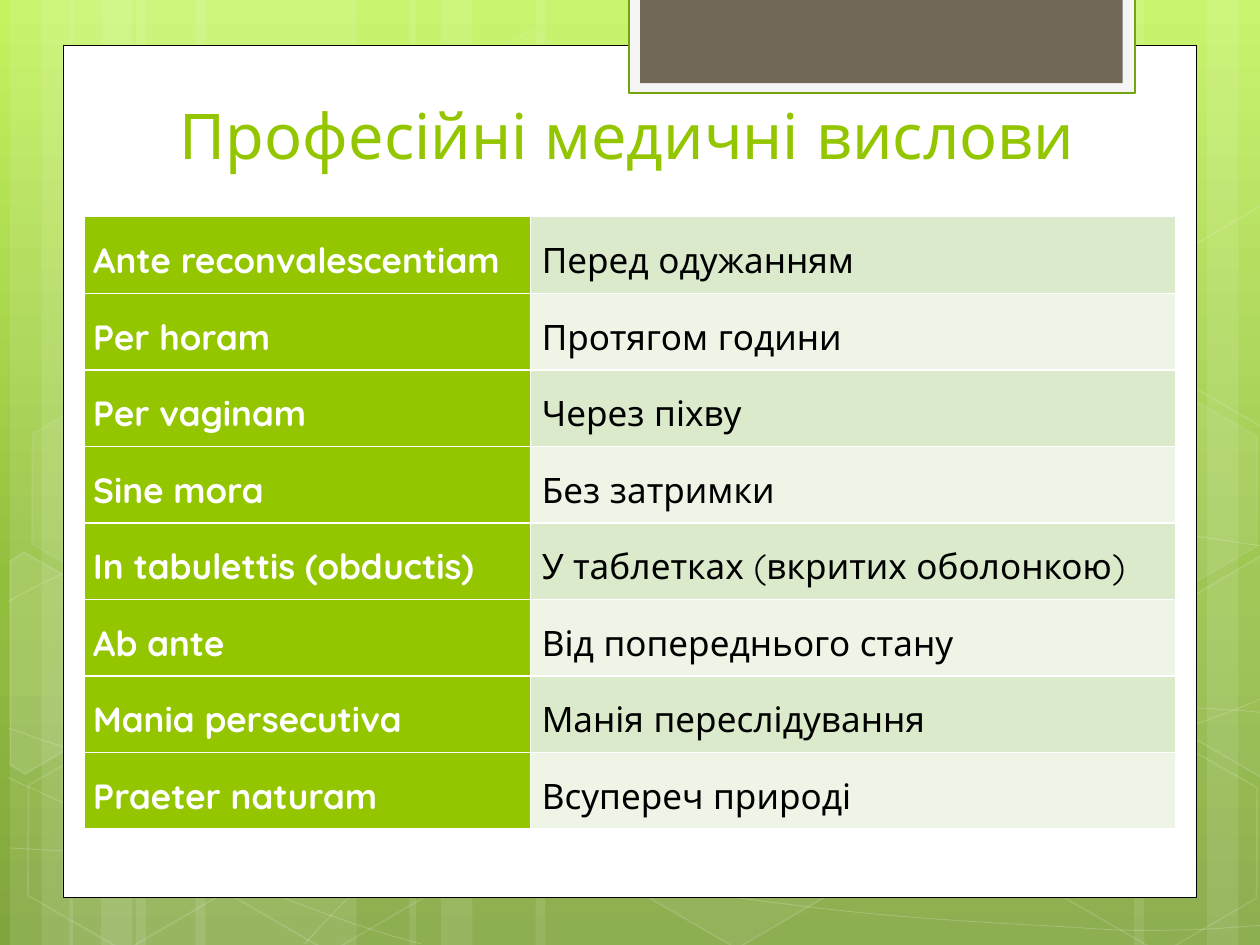
from math import cos, radians, sin
from lxml import etree
from pptx import Presentation
from pptx.dml.color import RGBColor
from pptx.enum.shapes import MSO_SHAPE
from pptx.enum.text import MSO_ANCHOR, MSO_AUTO_SIZE, PP_ALIGN
from pptx.oxml.ns import qn
from pptx.util import Inches, Pt

RECTANGLE, HEXAGON = MSO_SHAPE.RECTANGLE, MSO_SHAPE.HEXAGON
CENTER, JUSTIFY = PP_ALIGN.CENTER, PP_ALIGN.JUSTIFY
BOTTOM, NO_AUTOFIT = MSO_ANCHOR.BOTTOM, MSO_AUTO_SIZE.NONE

COLUMNS, ROWS, CELL = 10, 7.5, Inches(1)
FONT, TILT = "Quicksand", 30
COLORS = {
    "white": "FFFFFF", "black": "000000", "green": "94C600", "tab": "F5F5F5",
    "tab_edge": "74A510", "taupe": "71685A", "band_dark": "DCEACC", "band_light": "EEF5E7",
    "sky": "C3F35F", "meadow": "93BF3F", "moss": "81A53E",
}
BACKDROP_STOPS = [(0, "sky"), (62, "meadow"), (100, "moss")]
STRIPE_CLUSTERS = [(0.08, 1.75), (0.55, 1.75), (3.25, 3.08)]
RIGHT_STRIPES = [(7.33, 1.75), (9.58, 0.5), (9, 0.83)]
WAVES = [
    [[(0.07, 6.73)], [(0.61, 6.76), (1.15, 6.79), (1.9, 6.78)],
     [(2.65, 6.77), (3.58, 6.75), (4.58, 6.65)], [(5.58, 6.55), (7, 6.36), (7.92, 6.17)],
     [(8.83, 5.98), (9.77, 5.68), (10.07, 5.51)]],
    [[(0.07, 4.77)], [(0.36, 4.61), (0.65, 4.46), (1.21, 4.31)],
     [(1.78, 4.16), (2.59, 3.94), (3.47, 3.87)], [(4.36, 3.8), (5.44, 3.79), (6.54, 3.87)],
     [(7.64, 3.95), (9.47, 4.26), (10.07, 4.34)]],
    [[(0.06, 6.17)], [(1.27, 6.72), (2.47, 7.27), (3.34, 7.49)]],
    [[(0.07, 5.78)], [(0.38, 5.89), (0.7, 6), (1.28, 6.16)],
     [(1.86, 6.31), (2.73, 6.56), (3.57, 6.73)], [(4.4, 6.9), (5.45, 7.08), (6.28, 7.18)],
     [(7.11, 7.29), (8, 7.33), (8.53, 7.36)], [(9.05, 7.4), (9.19, 7.38), (9.45, 7.38)],
     [(9.71, 7.37), (9.89, 7.35), (10.07, 7.34)]],
    [[(2.42, 7.49)], [(2.6, 7.29), (2.78, 7.09), (3.02, 6.91)],
     [(3.26, 6.73), (3.6, 6.53), (3.88, 6.39)], [(4.16, 6.25), (4.33, 6.19), (4.7, 6.09)],
     [(5.06, 5.99), (5.73, 5.85), (6.08, 5.78)], [(6.44, 5.71), (6.49, 5.71), (6.8, 5.69)],
     [(7.11, 5.66), (7.6, 5.63), (7.94, 5.62)], [(8.29, 5.61), (8.86, 5.62), (8.86, 5.62)],
     [(9.53, 5.62)], [(9.71, 5.63), (9.88, 5.64), (9.97, 5.65)],
     [(10.06, 5.66), (10.03, 5.65), (10.06, 5.66)]],
]
HEXAGONS = [
    (3.34, 0.36, 4, 8), (4.97, 5.89, 6, 12), (0.11, 5.91, 0, 12), (0.14, 3.12, 7, 8),
    (1.74, 5.92, 0, 12), (7.53, 4.53, 10, 12), (8.34, 5.93, 0, 12), (8.34, 3.14, 7, 8),
]
LEFT_CUT = [(0.08, 4.45), (0.19, 4.38), (0.96, 4.82), (0.95, 5.7), (0.2, 6.14), (0.08, 6.07)]
RIGHT_CUT = [(9.26, 4.85), (10.01, 4.41), (10.09, 4.46), (10.09, 6.13), (10.02, 6.17),
             (9.26, 5.73)]
UPPER_CUT = [(x, y - 2.78) for x, y in RIGHT_CUT]
CUTS = [(LEFT_CUT, (0.36, 5.35), 10), (RIGHT_CUT, (9.85, 5.2), 4), (UPPER_CUT, (9.85, 2.41), 0)]
TITLE = "Професійні медичні вислови"
PHRASES = [
    ("Ante reconvalescentiam", "Перед одужанням"),
    ("Per horam", "Протягом години"),
    ("Per vaginam", "Через піхву"),
    ("Sine mora", "Без затримки"),
    ("In tabulettis (obductis)", "У таблетках (вкритих оболонкою)"),
    ("Ab ante", "Від попереднього стану"),
    ("Mania persecutiva", "Манія переслідування"),
    ("Praeter naturam", "Всупереч природі"),
]


def rgb(name):
    """Return the named colour."""
    return RGBColor.from_string(COLORS[name])


def grid(*lengths):
    """Convert grid lengths to slide units."""
    return [round(length * CELL) for length in lengths]


def paint(shape, fill=None, edge=None, weight=1, fill_opacity=100, edge_opacity=100):
    """Set the fill, edge and opacities of a shape without a shadow."""
    shape.shadow.inherit = False
    shape.fill.background()
    shape.line.fill.background()
    layers = []
    if fill and fill_opacity:
        layers.append((shape.fill, fill, fill_opacity, "a:solidFill"))
    if edge:
        shape.line.width = Pt(weight)
        layers.append((shape.line.fill, edge, edge_opacity, "a:ln/a:solidFill"))
    for layer, color, opacity, route in layers:
        layer.solid()
        layer.fore_color.rgb = rgb(color)
        if opacity < 100:
            steps = [qn(tag) for tag in (route + "/a:srgbClr").split("/")]
            tint = shape.element.spPr.find("/".join(steps))
            etree.SubElement(tint, qn("a:alpha"), val=str(opacity * 1000))


def add_part(slide, box, kind, left, top, width, height):
    """Add a preset shape placed relative to the box."""
    return slide.shapes.add_shape(kind, *grid(box[0] + left, box[1] + top, width, height))


def add_outline(slide, box, points, close):
    """Add a freeform through points relative to the box."""
    corners = [grid(box[0] + x, box[1] + y) for x, y in points]
    builder = slide.shapes.build_freeform(*corners[0])
    builder.add_line_segments(corners[1:], close=close)
    return builder.convert_to_shape()


def add_wave(slide, box, segments):
    """Add an open outline whose three-point segments are cubic curves."""
    wave = add_outline(slide, box, [point for segment in segments for point in segment], False)
    lines = iter(list(wave.element.iter(qn("a:lnTo"))))
    for segment in segments[1:]:
        group = [next(lines) for _ in segment]
        if len(group) == 3:
            curve = etree.Element(qn("a:cubicBezTo"))
            group[0].addprevious(curve)
            for line in group:
                curve.append(line[0])
                line.getparent().remove(line)
    return wave


def add_cut(slide, box, points, center):
    """Add a tilted outline turned about its center."""
    turn = radians(-TILT)
    offsets = [(x - center[0], y - center[1]) for x, y in points]
    upright = [(center[0] + x * cos(turn) - y * sin(turn),
                center[1] + x * sin(turn) + y * cos(turn)) for x, y in offsets]
    cut = add_outline(slide, box, upright, True)
    cut.rotation = TILT
    return cut


def fill_background(slide):
    """Fill the slide background with the green gradient."""
    fill = slide.background.fill
    fill.gradient()
    fill.gradient_angle = 270
    stops = next(slide.element.iter(qn("a:gsLst")))
    stops[:] = []
    for position, color in BACKDROP_STOPS:
        stop = etree.SubElement(stops, qn("a:gs"), pos=str(position * 1000))
        etree.SubElement(stop, qn("a:srgbClr"), val=COLORS[color])


def draw_backdrop(slide, box):
    """Draw the translucent stripes, waves and hexagons."""
    stripes = [stripe for start, wide in STRIPE_CLUSTERS
               for stripe in ((start + 1, wide), (start, 0.5), (start + 0.25, 0.83))]
    for left, width in stripes + RIGHT_STRIPES:
        paint(add_part(slide, box, RECTANGLE, left, 0, width, box[3]), "white", fill_opacity=10)
    for segments in WAVES:
        paint(add_wave(slide, box, segments), edge="white", weight=0.5, edge_opacity=20)
    for left, top, fill_opacity, edge_opacity in HEXAGONS:
        hexagon = add_part(slide, box, HEXAGON, left, top, 1.75, 1.52)
        hexagon.rotation = TILT
        hexagon.adjustments[0] = 0.285
        paint(hexagon, "white", "white", 1, fill_opacity, edge_opacity)
    for points, center, opacity in CUTS:
        paint(add_cut(slide, box, points, center), "white", "white", 1, opacity, 12)


def draw_card(slide, box):
    """Draw the white card with the tab hanging over its top edge."""
    paint(add_part(slide, box, RECTANGLE, 0, 0, *box[2:]), "white", "black", 0.5)
    paint(add_part(slide, box, RECTANGLE, 4.49, -0.38, 4.02, 0.76), "tab", "tab_edge", 1.25)
    paint(add_part(slide, box, RECTANGLE, 4.58, -0.38, 3.83, 0.68), "taupe")


def style_text(paragraph, size, color, align, bold=False):
    """Format one paragraph."""
    paragraph.alignment = align
    font = paragraph.font
    font.name, font.size, font.bold = FONT, Pt(size), bold
    font.color.rgb = rgb(color)


def place_title(slide, box):
    """Fill and place the title above the card."""
    title = slide.shapes.title
    title.left, title.top, title.width, title.height = grid(*box)
    frame = title.text_frame
    frame.text = TITLE
    frame.word_wrap, frame.auto_size, frame.vertical_anchor = True, NO_AUTOFIT, BOTTOM
    style_text(frame.paragraphs[0], 36, "green", CENTER)
    title.element.getparent().append(title.element)


def style_cell(cell, fill, color, bold, indent):
    """Format a glossary cell and its white borders."""
    cell.margin_left = cell.margin_right = Inches(0.07)
    cell.margin_top = cell.margin_bottom = 0
    paragraph = cell.text_frame.paragraphs[0]
    style_text(paragraph, 20, color, JUSTIFY, bold)
    paragraph.line_spacing = 1.5
    paragraph._p.get_or_add_pPr().set("marL", str(Inches(indent)))
    for side in ("a:lnL", "a:lnR", "a:lnT", "a:lnB"):
        edge = etree.SubElement(cell._tc.get_or_add_tcPr(), qn(side), w=str(Pt(1)))
        solid = etree.SubElement(edge, qn("a:solidFill"))
        etree.SubElement(solid, qn("a:srgbClr"), val=COLORS["white"])
    cell.fill.solid()
    cell.fill.fore_color.rgb = rgb(fill)


def place_glossary(slide, box):
    """Build the table of Latin phrases and their translations."""
    table = slide.shapes.add_table(len(PHRASES), 2, *grid(*box)).table
    table.first_row = table.horz_banding = False
    table.columns[0].width, table.columns[1].width = grid(3.54, box[2] - 3.54)
    for row, phrase in enumerate(PHRASES):
        latin, translation = table.cell(row, 0), table.cell(row, 1)
        latin.text, translation.text = phrase
        style_cell(latin, "green", "white", True, 0)
        style_cell(translation, ("band_dark", "band_light")[row % 2], "black", False, 0.02)


def main():
    """Build and save the slide."""
    deck = Presentation()
    deck.slide_width, deck.slide_height = grid(COLUMNS, ROWS)
    slide = deck.slides.add_slide(deck.slide_layouts[5])
    fill_background(slide)
    draw_backdrop(slide, (0, 0, COLUMNS, ROWS))
    draw_card(slide, (0.5, 0.36, 9, 6.76))
    place_title(slide, (1.14, 0.76, 7.68, 0.66))
    place_glossary(slide, (0.67, 1.72, 8.66, 4.86))
    deck.save("out.pptx")


if __name__ == "__main__":
    main()
